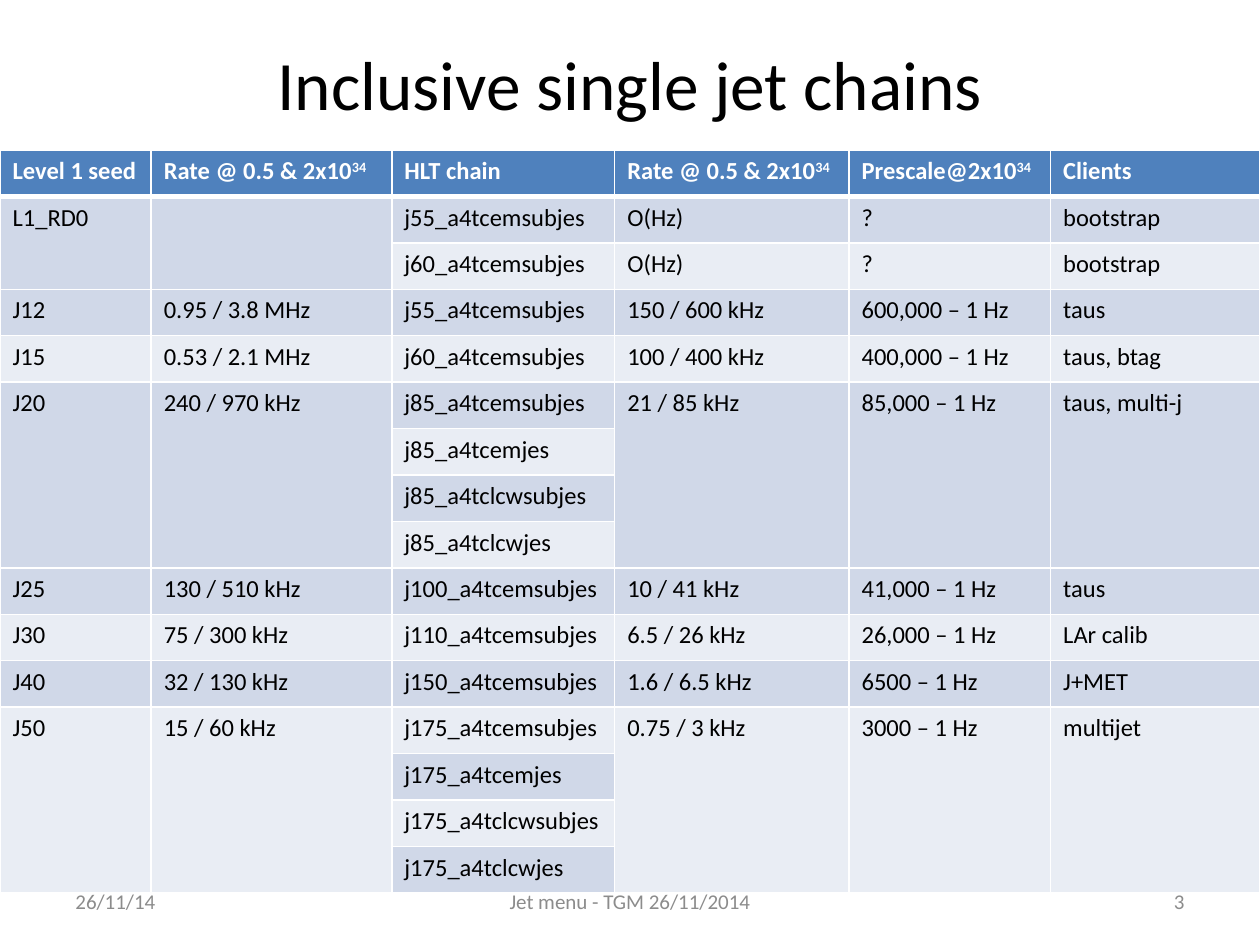
import pptx
import pptx.dml.color
import pptx.enum.text
import pptx.oxml.ns
import pptx.util
from lxml import etree

Pt = pptx.util.Pt
RGB = pptx.dml.color.RGBColor
ALIGN = pptx.enum.text.PP_ALIGN
MIDDLE = pptx.enum.text.MSO_ANCHOR.MIDDLE
qn = pptx.oxml.ns.qn

BLACK = RGB(0x00, 0x00, 0x00)
WHITE = RGB(0xFF, 0xFF, 0xFF)
GREY = RGB(0x8C, 0x8C, 0x8C)
HEADER = RGB(0x4F, 0x81, 0xBD)
BAND_DARK = RGB(0xD0, 0xD8, 0xE8)
BAND_LIGHT = RGB(0xE9, 0xED, 0xF4)

COL_WIDTHS = [86.4, 137.5, 127.4, 133.9, 115.2, 119.6]
ROW_HEIGHT = 26.55

# "^" starts a superscript; None continues the cell above
ROWS = [
    ["Level 1 seed", "Rate @ 0.5 & 2x10^34", "HLT chain",
     "Rate @ 0.5 & 2x10^34", "Prescale@2x10^34", "Clients"],
    ["L1_RD0", "", "j55_a4tcemsubjes", "O(Hz)", "?", "bootstrap"],
    [None, None, "j60_a4tcemsubjes", "O(Hz)", "?", "bootstrap"],
    ["J12", "0.95 / 3.8 MHz", "j55_a4tcemsubjes", "150 / 600 kHz", "600,000 – 1 Hz", "taus"],
    ["J15", "0.53 / 2.1 MHz", "j60_a4tcemsubjes", "100 / 400 kHz", "400,000 – 1 Hz", "taus, btag"],
    ["J20", "240 / 970 kHz", "j85_a4tcemsubjes", "21 / 85 kHz", "85,000 – 1 Hz", "taus, multi-j"],
    [None, None, "j85_a4tcemjes", None, None, None],
    [None, None, "j85_a4tclcwsubjes", None, None, None],
    [None, None, "j85_a4tclcwjes", None, None, None],
    ["J25", "130 / 510 kHz", "j100_a4tcemsubjes", "10 / 41 kHz", "41,000 – 1 Hz", "taus"],
    ["J30", "75 / 300 kHz", "j110_a4tcemsubjes", "6.5 / 26 kHz", "26,000 – 1 Hz", "LAr calib"],
    ["J40", "32 / 130 kHz", "j150_a4tcemsubjes", "1.6 / 6.5 kHz", "6500 – 1 Hz", "J+MET"],
    ["J50", "15 / 60 kHz", "j175_a4tcemsubjes", "0.75 / 3 kHz", "3000 – 1 Hz", "multijet"],
    [None, None, "j175_a4tcemjes", None, None, None],
    [None, None, "j175_a4tclcwsubjes", None, None, None],
    [None, None, "j175_a4tclcwjes", None, None, None],
]


def write(tf, text, size=14, color=BLACK, bold=False, align=ALIGN.LEFT):
    p = tf.paragraphs[0]
    p.alignment = align
    if not text:
        # Keeps an empty cell from growing its row
        p._p.get_or_add_endParaRPr().set("sz", str(size * 100))
        return
    for i, part in enumerate(text.split("^")):
        r = p.add_run()
        r.text = part
        r.font.name = "Calibri"
        r.font.size = Pt(size)
        r.font.bold = bold
        r.font.color.rgb = color
        if i:
            r._r.get_or_add_rPr().set("baseline", "30000")


def add_text(s, text, left, top, width, height, **fmt):
    sp = s.shapes.add_textbox(Pt(left), Pt(top), Pt(width), Pt(height))
    tf = sp.text_frame
    tf.word_wrap = True
    tf.vertical_anchor = MIDDLE
    write(tf, text, **fmt)


def set_borders(cell, top=1, bottom=1):
    tc_pr = cell._tc.get_or_add_tcPr()
    for tag, width in (("lnL", 1), ("lnR", 1), ("lnT", top), ("lnB", bottom)):
        ln = etree.SubElement(tc_pr, qn("a:" + tag), w=str(Pt(width)))
        fill = etree.SubElement(ln, qn("a:solidFill"))
        etree.SubElement(fill, qn("a:srgbClr"), val=str(WHITE))


def row_fill(row):
    if row == 0:
        return HEADER
    return BAND_DARK if row % 2 else BAND_LIGHT


def add_chain_table(s, left, top):
    n = len(ROWS)
    table = s.shapes.add_table(n, len(COL_WIDTHS), Pt(left), Pt(top),
                               Pt(sum(COL_WIDTHS)), Pt(n * ROW_HEIGHT)).table
    for col, width in zip(table.columns, COL_WIDTHS):
        col.width = Pt(width)
    for row in table.rows:
        row.height = Pt(ROW_HEIGHT)

    for i, values in enumerate(ROWS):
        for j, text in enumerate(values):
            cell = table.cell(i, j)
            set_borders(cell, top=3 if i == 1 else 1, bottom=3 if i == 0 else 1)
            cell.fill.solid()
            cell.fill.fore_color.rgb = row_fill(i)
            write(cell.text_frame, text, bold=i == 0, color=BLACK if i else WHITE)

    # Join each cell with the continued cells below it
    for j in range(len(COL_WIDTHS)):
        starts = [i for i in range(n) if ROWS[i][j] is not None] + [n]
        for first, following in zip(starts, starts[1:]):
            if following - first > 1:
                table.cell(first, j).merge(table.cell(following - 1, j))


def main():
    prs = pptx.Presentation()
    prs.slide_width, prs.slide_height = Pt(720), Pt(540)
    s = prs.slides.add_slide(prs.slide_layouts[6])

    # Title and table
    add_text(s, "Inclusive single jet chains", 36, 21.6, 648, 51.1,
             size=39.6, align=ALIGN.CENTER)
    add_chain_table(s, 0, 85.7)

    # Footer: date, talk and page number
    for text, left, width, align in (
        ("26/11/14", 36, 168, ALIGN.LEFT),
        ("Jet menu - TGM 26/11/2014", 246, 228, ALIGN.CENTER),
        ("3", 516, 168, ALIGN.RIGHT),
    ):
        add_text(s, text, left, 500.5, width, 28.75, size=12, color=GREY, align=align)

    prs.save("out.pptx")


if __name__ == "__main__":
    main()
